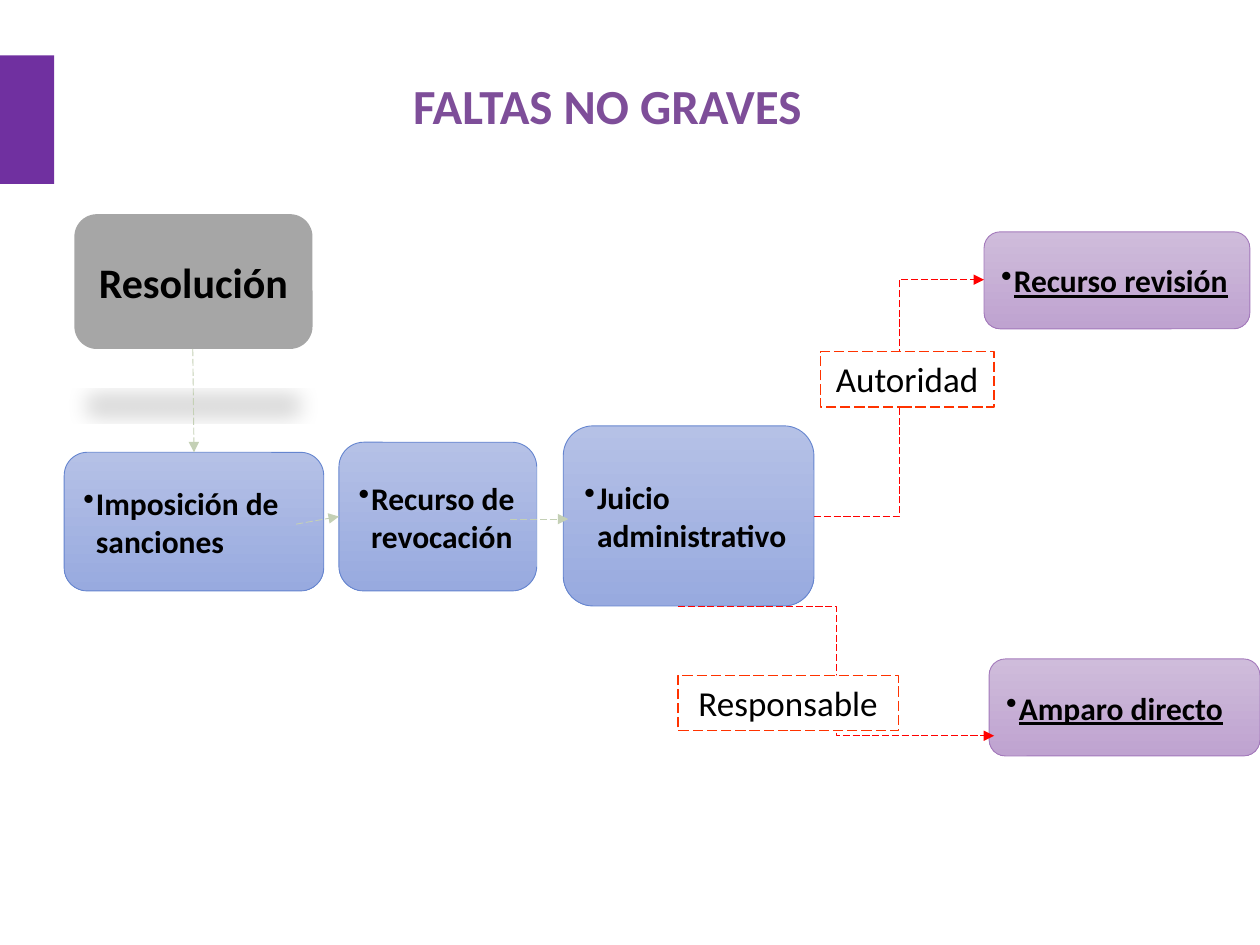
from typing import NamedTuple

from lxml import etree
from pptx import Presentation, util as u
from pptx.dml.color import RGBColor
from pptx.enum import dml, shapes, text
from pptx.oxml import ns

SHAPE, LINE = shapes.MSO_SHAPE, shapes.MSO_CONNECTOR
BLACK, RED, SAGE = "000000", "FF0000", "C4D0B5"


class Place(NamedTuple):
    left: float
    top: float
    width: float
    height: float


class Palette(NamedTuple):
    top: str
    bottom: str
    line: str


class Step(NamedTuple):
    words: str
    place: Place
    palette: Palette
    underline: bool = False


class Arrow(NamedTuple):
    start: tuple[float, float]
    end: tuple[float, float]
    color: str
    kind: int = LINE.STRAIGHT


BLUE = Palette("B5C1E6", "98AADF", "6585CF")
PURPLE = Palette("CFBCDB", "BFA3D0", "A379BB")

STEPS = [
    Step("Imposición de sanciones", Place(0.51, 3.59, 2.06, 1.1), BLUE),
    Step("Recurso de revocación", Place(2.69, 3.51, 1.57, 1.18), BLUE),
    Step("Juicio administrativo", Place(4.47, 3.38, 1.99, 1.43), BLUE),
    Step("Recurso revisión", Place(7.81, 1.84, 2.11, 0.77), PURPLE, True),
    Step("Amparo directo", Place(7.85, 5.23, 2.15, 0.77), PURPLE, True),
]
ARROWS = [
    Arrow((4.05, 4.12), (4.51, 4.12), SAGE),
    Arrow((2.35, 4.16), (2.69, 4.1), SAGE),
    Arrow((1.53, 2.77), (1.54, 3.59), SAGE),
    Arrow((5.38, 4.81), (7.89, 5.84), RED, LINE.ELBOW),
    Arrow((6.46, 4.1), (7.81, 2.22), RED, LINE.ELBOW),
]
PARTIES = {
    "Autoridad": Place(6.51, 2.79, 1.38, 0.44),
    "Responsable": Place(5.38, 5.36, 1.75, 0.44),
}


def rgb(color: str) -> RGBColor:
    return RGBColor.from_string(color)


def add_child(parent, tag: str, **attributes):
    child = etree.SubElement(parent, ns.qn(tag))
    for name, value in attributes.items():
        child.set(name, str(value))
    return child


def write(box, words: str, *, size: int, color: str = BLACK, bold: bool = False,
          underline: bool = False, bullet: bool = False, wrap: bool = True,
          align=text.PP_ALIGN.LEFT, anchor=text.MSO_ANCHOR.MIDDLE) -> None:
    frame = box.text_frame
    frame.word_wrap = wrap
    frame.vertical_anchor = anchor
    para = frame.paragraphs[0]
    para.alignment = align
    if bullet:
        indent = u.Inches(0.1)
        settings = para._p.get_or_add_pPr()
        settings.set("marL", str(indent))
        settings.set("indent", str(-indent))
        add_child(settings, "a:buChar", char="•")
    span = para.add_run()
    span.text = words
    font = span.font
    font.name, font.size, font.bold = "Calibri", u.Pt(size), bold
    font.underline = underline
    font.color.rgb = rgb(color)


def add_box(page, kind, place: Place, fill: str | Palette):
    box = page.shapes.add_shape(kind, *map(u.Inches, place))
    box.shadow.inherit = False
    if isinstance(fill, Palette):
        box.fill.gradient()
        box.fill.gradient_angle = 270
        for stop, color in zip(box.fill.gradient_stops, (fill.top, fill.bottom)):
            stop.color.rgb = rgb(color)
        box.line.color.rgb = rgb(fill.line)
        box.line.width = u.Pt(0.5)
    else:
        box.fill.solid()
        box.fill.fore_color.rgb = rgb(fill)
        box.line.fill.background()
    return box


def dash(line, color: str, width: float) -> None:
    line.color.rgb = rgb(color)
    line.width = u.Pt(width)
    line.dash_style = dml.MSO_LINE.LONG_DASH


def add_shadow_below(box) -> None:
    effects = box._element.spPr.find(ns.qn("a:effectLst"))
    shadow = add_child(effects, "a:outerShdw", blurRad=u.Pt(12), dist=u.Pt(25),
                       dir=5400000, sx=90000, sy=-19000, rotWithShape=0)
    color = add_child(shadow, "a:srgbClr", val=BLACK)
    add_child(color, "a:alpha", val=15000)


def add_step(page, step: Step) -> None:
    box = add_box(page, SHAPE.ROUNDED_RECTANGLE, step.place, step.palette)
    write(box, step.words, size=18, bold=True, underline=step.underline, bullet=True)


def add_arrow(page, arrow: Arrow) -> None:
    ends = map(u.Inches, (*arrow.start, *arrow.end))
    connector = page.shapes.add_connector(arrow.kind, *ends)
    dash(connector.line, arrow.color, 0.5)
    add_child(connector.line._get_or_add_ln(), "a:tailEnd", type="triangle")
    add_child(connector._element.spPr, "a:effectLst")


def add_party(page, words: str, place: Place) -> None:
    box = add_box(page, SHAPE.RECTANGLE, place, "FFFFFF")
    dash(box.line, "FF3300", 0.75)
    write(box, words, size=20, align=text.PP_ALIGN.CENTER, anchor=text.MSO_ANCHOR.TOP)


def main() -> None:
    deck = Presentation()
    deck.slide_width, deck.slide_height = u.Inches(10), u.Inches(7.5)
    page = deck.slides.add_slide(deck.slide_layouts[6])

    # Side band and title
    add_box(page, SHAPE.RECTANGLE, Place(0, 0.44, 0.43, 1.02), "7030A0")
    title = page.shapes.add_textbox(*map(u.Inches, Place(3.18, 0.55, 3.32, 0.57)))
    write(title, "FALTAS NO GRAVES", size=28, color="7E4E99", bold=True,
          wrap=False, anchor=text.MSO_ANCHOR.TOP)

    # Starting point
    start = add_box(page, SHAPE.ROUNDED_RECTANGLE, Place(0.59, 1.7, 1.89, 1.07), "A6A6A6")
    add_shadow_below(start)
    write(start, "Resolución", size=24, bold=True, align=text.PP_ALIGN.CENTER)

    # Steps, then arrows, then the labels that cover the arrows
    for step in STEPS:
        add_step(page, step)
    for arrow in ARROWS:
        add_arrow(page, arrow)
    for words, place in PARTIES.items():
        add_party(page, words, place)

    deck.save("out.pptx")


if __name__ == "__main__":
    main()
